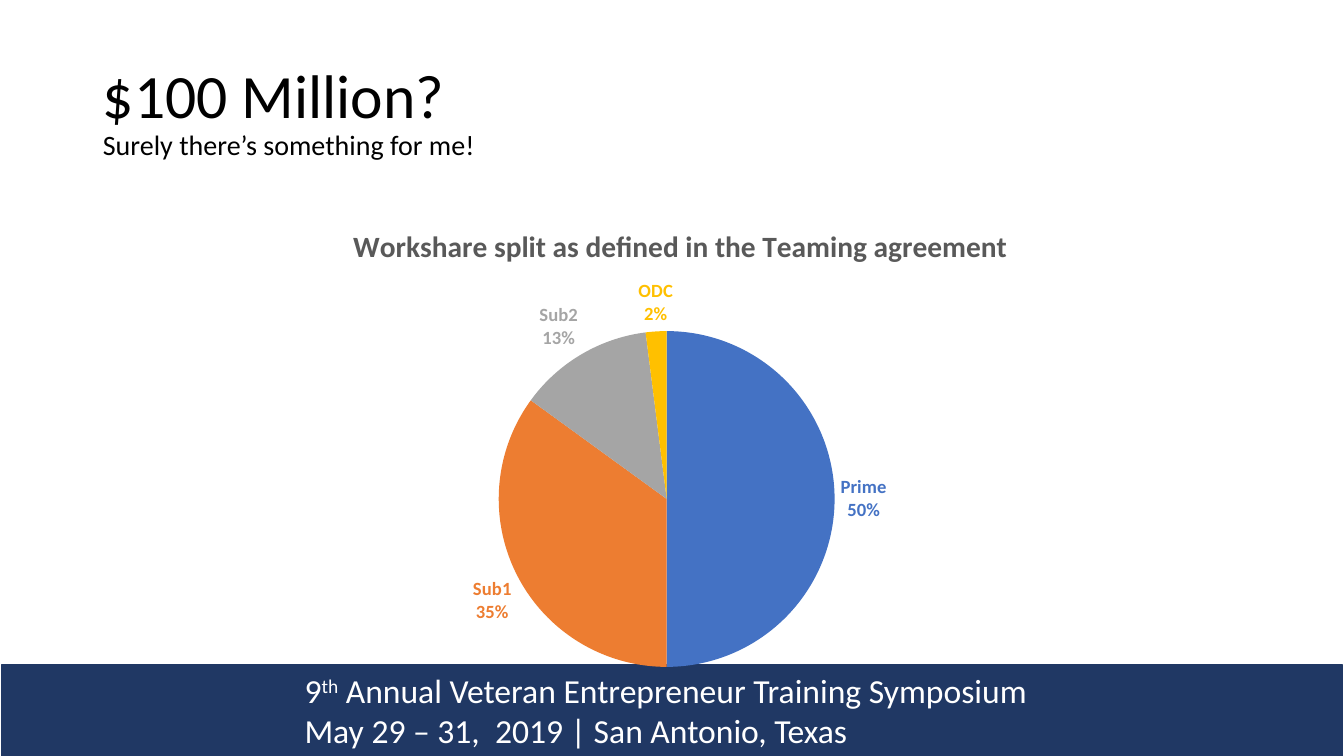
"""Build the workshare slide: a title, a pie chart and the symposium footer."""
from lxml import etree
from pptx import Presentation
from pptx.chart.data import CategoryChartData
from pptx.dml.color import RGBColor
from pptx.enum.chart import XL_CHART_TYPE, XL_LABEL_POSITION
from pptx.enum.shapes import MSO_SHAPE
from pptx.enum.text import MSO_ANCHOR, PP_ALIGN
from pptx.oxml.ns import qn
from pptx.util import Inches, Pt

PIE = XL_CHART_TYPE.PIE
OUTSIDE_END = XL_LABEL_POSITION.OUTSIDE_END
RECTANGLE = MSO_SHAPE.RECTANGLE
MIDDLE = MSO_ANCHOR.MIDDLE
LEFT = PP_ALIGN.LEFT

THEME = {
    "font": "Calibri",
    "black": RGBColor.from_string("000000"),
    "white": RGBColor.from_string("FFFFFF"),
    "navy": RGBColor.from_string("203864"),
    "heading": RGBColor.from_string("595959"),
    "title_size": Pt(44),
    "subtitle_size": Pt(20),
    "footer_size": Pt(24),
    "heading_size": Pt(21),
    "label_size": Pt(13.3),
}
WORKSHARE = [
    ("Prime", 50, "4472C4"),
    ("Sub1", 35, "ED7D31"),
    ("Sub2", 13, "A5A5A5"),
    ("ODC", 2, "FFC000"),
]


def style(font, size, color, bold=False):
    font.name = THEME["font"]
    font.size = size
    font.bold = bold
    font.color.rgb = color


def place(parent, index, settings):
    for old_layout in parent.findall(qn("c:layout")):
        parent.remove(old_layout)
    layout = etree.Element(qn("c:layout"))
    manual = etree.SubElement(layout, qn("c:manualLayout"))
    for tag, value in settings.items():
        etree.SubElement(manual, qn(f"c:{tag}")).set("val", str(value))
    parent.insert(index, layout)


presentation = Presentation()
presentation.slide_width = Inches(13.33)
presentation.slide_height = Inches(7.5)
slide = presentation.slides.add_slide(presentation.slide_layouts[5])

title = slide.shapes.title
title.left, title.top = Inches(0.92), Inches(0.4)
title.width, title.height = Inches(11.5), Inches(1.45)
title.text_frame.vertical_anchor = MIDDLE
headline = title.text_frame.paragraphs[0]
headline.alignment = LEFT
headline.line_spacing = 0.9
question = headline.add_run()
question.text = "$100 Million?"
style(question.font, THEME["title_size"], THEME["black"])
headline.add_line_break()
remark = headline.add_run()
remark.text = "Surely there’s something for me!"
style(remark.font, THEME["subtitle_size"], THEME["black"])

footer = slide.shapes.add_shape(
    RECTANGLE, Inches(0.02), Inches(6.59), Inches(13.29), Inches(0.91))
footer.shadow.inherit = False
footer.fill.solid()
footer.fill.fore_color.rgb = THEME["navy"]
footer.line.color.rgb = THEME["navy"]
footer.line.width = Pt(1)
footer_text = footer.text_frame
footer_text.vertical_anchor = MIDDLE
footer_text.margin_left = Inches(3)
event = footer_text.paragraphs[0]
for words in ("9", "th", " Annual Veteran Entrepreneur Training Symposium"):
    part = event.add_run()
    part.text = words
    if words == "th":
        part.font._element.set("baseline", "30000")
date_and_place = footer_text.add_paragraph()
date_and_place.text = "May 29 – 31,  2019 | San Antonio, Texas"
for line in footer_text.paragraphs:
    line.alignment = LEFT
    style(line.font, THEME["footer_size"], THEME["white"])

shares = CategoryChartData()
shares.categories = [name for name, _, _ in WORKSHARE]
shares.add_series("Series 1", [share for _, share, _ in WORKSHARE])
chart = slide.shapes.add_chart(
    PIE, Inches(0.92), Inches(2), Inches(11.5), Inches(4.76), shares).chart
style(chart.font, THEME["label_size"], THEME["black"])
chart.has_legend = False
chart.has_title = True
heading = chart.chart_title.text_frame.paragraphs[0]
heading.text = "Workshare split as defined in the Teaming agreement"
style(heading.runs[0].font, THEME["heading_size"], THEME["heading"], True)
place(chart.chart_title._element, 1,
      {"xMode": "edge", "yMode": "edge", "x": 0.22, "y": 0.04})

pie = chart.plots[0]
pie.vary_by_categories = True
place(chart._chartSpace.chart.plotArea, 0,
      {"layoutTarget": "inner", "xMode": "edge", "yMode": "edge",
       "x": 0.35, "y": 0.27, "w": 0.29, "h": 0.7})

series = pie.series[0]
labels = series.data_labels
labels.show_percentage = True
labels.show_category_name = True
labels.show_value = False
labels.position = OUTSIDE_END
for index, (_, _, color) in enumerate(WORKSHARE):
    slice_color = RGBColor.from_string(color)
    point = series.points[index]
    point.format.fill.solid()
    point.format.fill.fore_color.rgb = slice_color
    style(point.data_label.font, THEME["label_size"], slice_color, True)
    point.data_label.position = OUTSIDE_END
for label in labels._element.findall(qn("c:dLbl")):
    for tag, shown in (("showVal", "0"), ("showCatName", "1"), ("showPercent", "1")):
        label.find(qn(f"c:{tag}")).set("val", shown)
    etree.SubElement(label, qn("c:separator")).text = "\n"

presentation.save("out.pptx")
